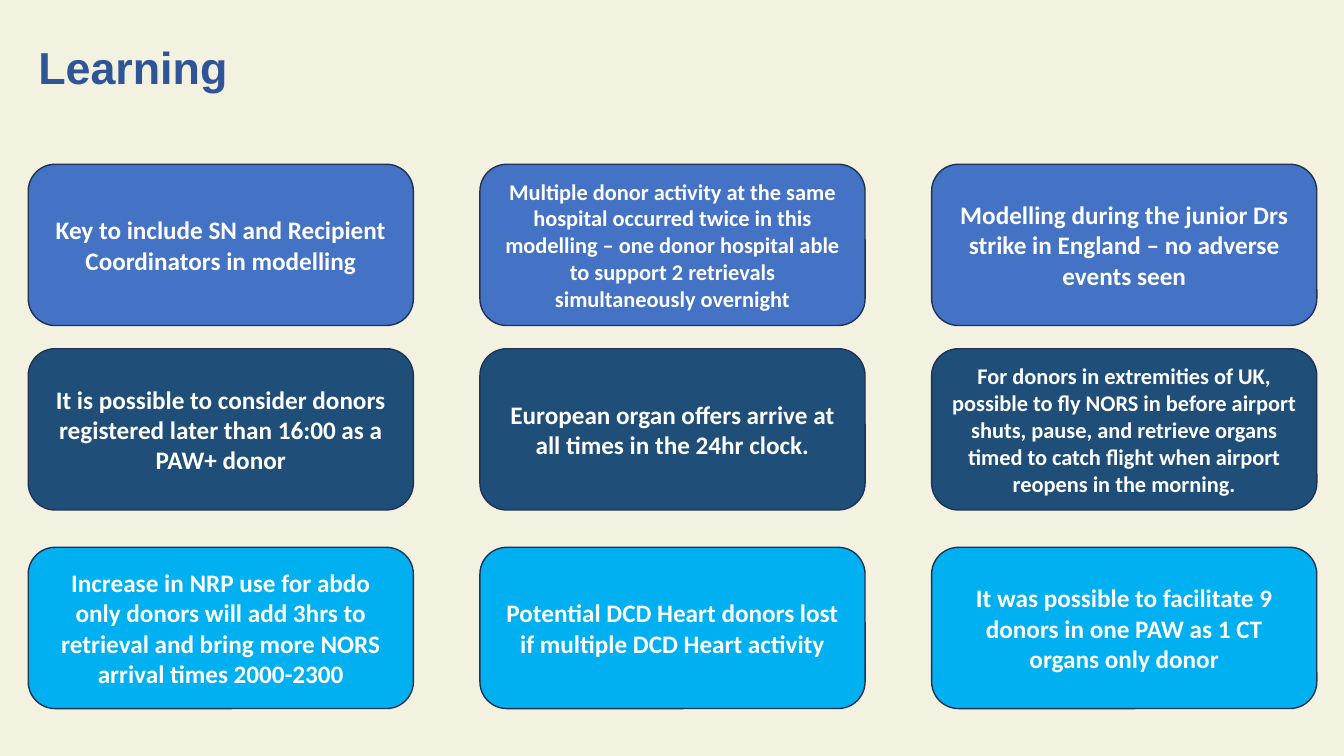
from pptx import Presentation
from pptx.dml.color import RGBColor
from pptx.enum.shapes import MSO_SHAPE as Shape
from pptx.enum.text import MSO_ANCHOR as Anchor, PP_ALIGN as Align
from pptx.util import Inches, Pt

CREAM = RGBColor(0xF3, 0xF2, 0xE1)
INK = RGBColor(0x2F, 0x55, 0x97)
EDGE = RGBColor(0x1E, 0x32, 0x56)
WHITE = RGBColor(0xFF, 0xFF, 0xFF)
BLUE = RGBColor(0x44, 0x72, 0xC4)
NAVY = RGBColor(0x1F, 0x4E, 0x79)
SKY = RGBColor(0x00, 0xB0, 0xF0)

# Card grid, in inches
LEFT, STEP = 0.28, 4.48
TOPS = (1.63, 3.46, 5.43)
WIDE, HIGH = 3.82, 1.6

# Each row: fill, then (text, size) for every column
ROWS = (
    (BLUE, (
        ("Key to include SN and Recipient Coordinators in modelling", 18),
        ("Multiple donor activity at the same hospital occurred twice in this "
         "modelling – one donor hospital able to support 2 retrievals "
         "simultaneously overnight", 16),
        ("Modelling during the junior Drs strike in England – no adverse "
         "events seen", 18),
    )),
    (NAVY, (
        ("It is possible to consider donors registered later than 16:00 as a "
         "PAW+ donor", 18),
        ("European organ offers arrive at all times in the 24hr clock.", 18),
        ("For donors in extremities of UK, possible to fly NORS in before "
         "airport shuts, pause, and retrieve organs timed to catch flight "
         "when airport reopens in the morning.", 16),
    )),
    (SKY, (
        ("Increase in NRP use for abdo only donors will add 3hrs to retrieval "
         "and bring more NORS arrival times 2000-2300", 18),
        ("Potential DCD Heart donors lost if multiple DCD Heart activity", 18),
        ("It was possible to facilitate 9 donors in one PAW as 1 CT organs "
         "only donor", 18),
    )),
)


class Deck:
    """Holds the style and the current slide."""

    def __init__(self):
        self.show = Presentation()
        self.show.slide_width = Inches(13.33)
        self.show.slide_height = Inches(7.5)
        self.slide = self.show.slides.add_slide(self.show.slide_layouts[5])
        fill = self.slide.background.fill
        fill.solid()
        fill.fore_color.rgb = CREAM

    def label(self, shape, text, face, size, tint, align):
        frame = shape.text_frame
        frame.text = text
        frame.word_wrap = True
        frame.vertical_anchor = Anchor.MIDDLE
        para = frame.paragraphs[0]
        para.alignment = align
        font = para.runs[0].font
        font.name, font.size, font.bold = face, Pt(size), True
        font.color.rgb = tint
        return para

    def title(self, text):
        head = self.slide.shapes.title
        head.left, head.top = Inches(LEFT), Inches(-0.03)
        head.width, head.height = Inches(9.98), Inches(1.45)
        para = self.label(head, text, "Arial", 32, INK, Align.LEFT)
        para.line_spacing = 0.9

    def card(self, col, row, text, size, fill):
        card = self.slide.shapes.add_shape(
            Shape.ROUNDED_RECTANGLE, Inches(LEFT + col * STEP),
            Inches(TOPS[row]), Inches(WIDE), Inches(HIGH))
        card.shadow.inherit = False
        card.fill.solid()
        card.fill.fore_color.rgb = fill
        card.line.color.rgb = EDGE
        card.line.width = Pt(1)
        self.label(card, text, "Calibri", size, WHITE, Align.CENTER)


def main():
    deck = Deck()
    deck.title("Learning")
    for row, (fill, cells) in enumerate(ROWS):
        for col, (text, size) in enumerate(cells):
            deck.card(col, row, text, size, fill)
    deck.show.save("out.pptx")


if __name__ == "__main__":
    main()
